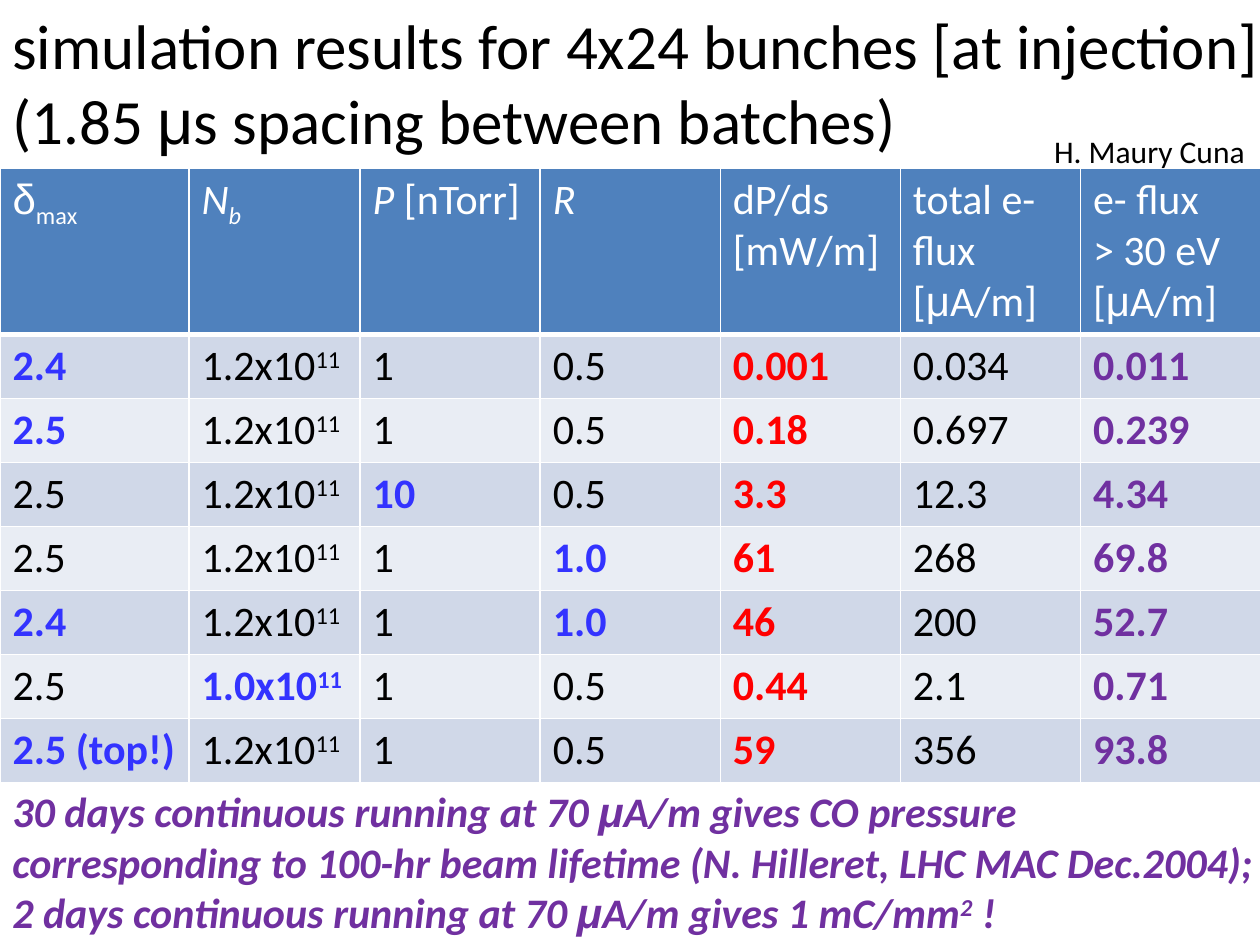
from lxml import etree
from pptx import Presentation
from pptx.dml.color import RGBColor
from pptx.enum.text import MSO_AUTO_SIZE
from pptx.oxml.ns import qn
from pptx.util import Cm, Pt

BLANK_LAYOUT = 6
FIT_SHAPE = MSO_AUTO_SIZE.SHAPE_TO_FIT_TEXT

BLACK = RGBColor(0x00, 0x00, 0x00)
WHITE = RGBColor(0xFF, 0xFF, 0xFF)
BLUE = RGBColor(0x33, 0x33, 0xFF)
RED = RGBColor(0xFF, 0x00, 0x00)
PURPLE = RGBColor(0x70, 0x30, 0xA0)
HEADER_FILL = RGBColor(0x4F, 0x81, 0xBD)
BAND_FILLS = (RGBColor(0xD0, 0xD8, 0xE8), RGBColor(0xE9, 0xED, 0xF4))

GREEK = "δμ"
SUB = {"baseline": -25}
SUPER = {"baseline": 30}
ITALIC = {"italic": True}
MICROAMPERE = ["[", "μ", "A/m]"]

# Each text is a list of lines, each line a list of runs:
# a plain string, or a string with its own format.
TITLE = [
    ["simulation results for 4x24 bunches [at injection]"],
    ["(1.85 ", "μ", "s spacing between batches)"],
]
AUTHOR = [["H. Maury Cuna"]]
CONCLUSION = [
    ["30 days continuous running at 70 ", "μ", "A/m gives CO pressure"],
    ["corresponding to 100-hr beam lifetime (N. Hilleret, LHC MAC Dec.2004);"],
    ["2 days continuous running at 70 ", "μ", "A/m gives 1 mC/mm", ("2", SUPER), " !"],
]
HEADERS = [
    [["δ", ("max", SUB)]],
    [[("N", ITALIC), ("b", ITALIC | SUB)]],
    [[("P ", ITALIC), "[nTorr]"]],
    [[("R", ITALIC)]],
    [["dP/ds [mW/m]"]],
    [["total e- flux"], MICROAMPERE],
    [["e- flux"], ["> 30 eV"], MICROAMPERE],
]
RESULTS = [
    ("2.4", "1.2", "1", "0.5", "0.001", "0.034", "0.011"),
    ("2.5", "1.2", "1", "0.5", "0.18", "0.697", "0.239"),
    ("2.5", "1.2", "10", "0.5", "3.3", "12.3", "4.34"),
    ("2.5", "1.2", "1", "1.0", "61", "268", "69.8"),
    ("2.4", "1.2", "1", "1.0", "46", "200", "52.7"),
    ("2.5", "1.0", "1", "0.5", "0.44", "2.1", "0.71"),
    ("2.5 (top!)", "1.2", "1", "0.5", "59", "356", "93.8"),
]
BUNCH_COLUMN = 1
COLUMN_COLORS = {4: RED, 6: PURPLE}
# Varied parameters, as (result row, column)
HIGHLIGHTS = {(0, 0), (1, 0), (2, 2), (3, 3), (4, 0), (4, 3), (5, 1), (6, 0)}

COLUMN_WIDTHS = [Cm(3.81), Cm(3.45)] + [Cm(3.63)] * 5
HEADER_HEIGHT = Cm(3.33)
ROW_HEIGHT = Cm(1.29)


def write_lines(text_frame, lines, size, color, bold=False, italic=False):
    for index, line in enumerate(lines):
        paragraph = text_frame.paragraphs[0] if index == 0 else text_frame.add_paragraph()
        for item in line:
            text, style = (item, {}) if isinstance(item, str) else item
            run = paragraph.add_run()
            run.text = text
            font = run.font
            font.name = "Arial" if text in GREEK else "Calibri"
            font.size = Pt(size)
            font.color.rgb = color
            font.bold = bold
            font.italic = style.get("italic", italic)
            if "baseline" in style:
                run._r.get_or_add_rPr().set("baseline", str(style["baseline"] * 1000))


def add_text(slide, left, top, width, height, lines, size, color, **style):
    box = slide.shapes.add_textbox(Cm(left), Cm(top), Cm(width), Cm(height))
    box.text_frame.word_wrap = False
    box.text_frame.auto_size = FIT_SHAPE
    write_lines(box.text_frame, lines, size, color, **style)


def set_borders(cell, bottom_width):
    properties = cell._tc.get_or_add_tcPr()
    for side, width in (("L", 1), ("R", 1), ("T", 1), ("B", bottom_width)):
        line = etree.SubElement(properties, qn(f"a:ln{side}"), w=str(Pt(width)))
        fill = etree.SubElement(line, qn("a:solidFill"))
        etree.SubElement(fill, qn("a:srgbClr"), val=str(WHITE))


def fill_cell(cell, lines, fill, color, bold=False, bottom_width=1):
    set_borders(cell, bottom_width)
    cell.fill.solid()
    cell.fill.fore_color.rgb = fill
    write_lines(cell.text_frame, lines, 24, color, bold=bold)


def add_results_table(slide):
    height = HEADER_HEIGHT + ROW_HEIGHT * len(RESULTS)
    table = slide.shapes.add_table(
        len(RESULTS) + 1, len(HEADERS), Cm(0), Cm(3.39), sum(COLUMN_WIDTHS), height
    ).table
    for column, width in zip(table.columns, COLUMN_WIDTHS):
        column.width = width
    for index, row in enumerate(table.rows):
        row.height = ROW_HEIGHT if index else HEADER_HEIGHT

    # Header row
    for column, lines in enumerate(HEADERS):
        fill_cell(table.cell(0, column), lines, HEADER_FILL, WHITE, bottom_width=3)

    # Result rows
    for row, values in enumerate(RESULTS):
        for column, value in enumerate(values):
            line = [value + "x10", ("11", SUPER)] if column == BUNCH_COLUMN else [value]
            color = BLUE if (row, column) in HIGHLIGHTS else COLUMN_COLORS.get(column, BLACK)
            fill_cell(table.cell(row + 1, column), [line], BAND_FILLS[row % 2],
                      color, bold=color != BLACK)


def main():
    presentation = Presentation()
    presentation.slide_width = Cm(25.4)
    presentation.slide_height = Cm(19.05)
    slide = presentation.slides.add_slide(presentation.slide_layouts[BLANK_LAYOUT])

    add_results_table(slide)
    add_text(slide, 0, 0, 25.88, 3.33, TITLE, 36, BLACK)
    add_text(slide, 0, 15.72, 25.73, 3.33, CONCLUSION, 24, PURPLE, bold=True, italic=True)
    add_text(slide, 21, 2.54, 4.4, 1.03, AUTHOR, 18, BLACK)

    presentation.save("out.pptx")


if __name__ == "__main__":
    main()
